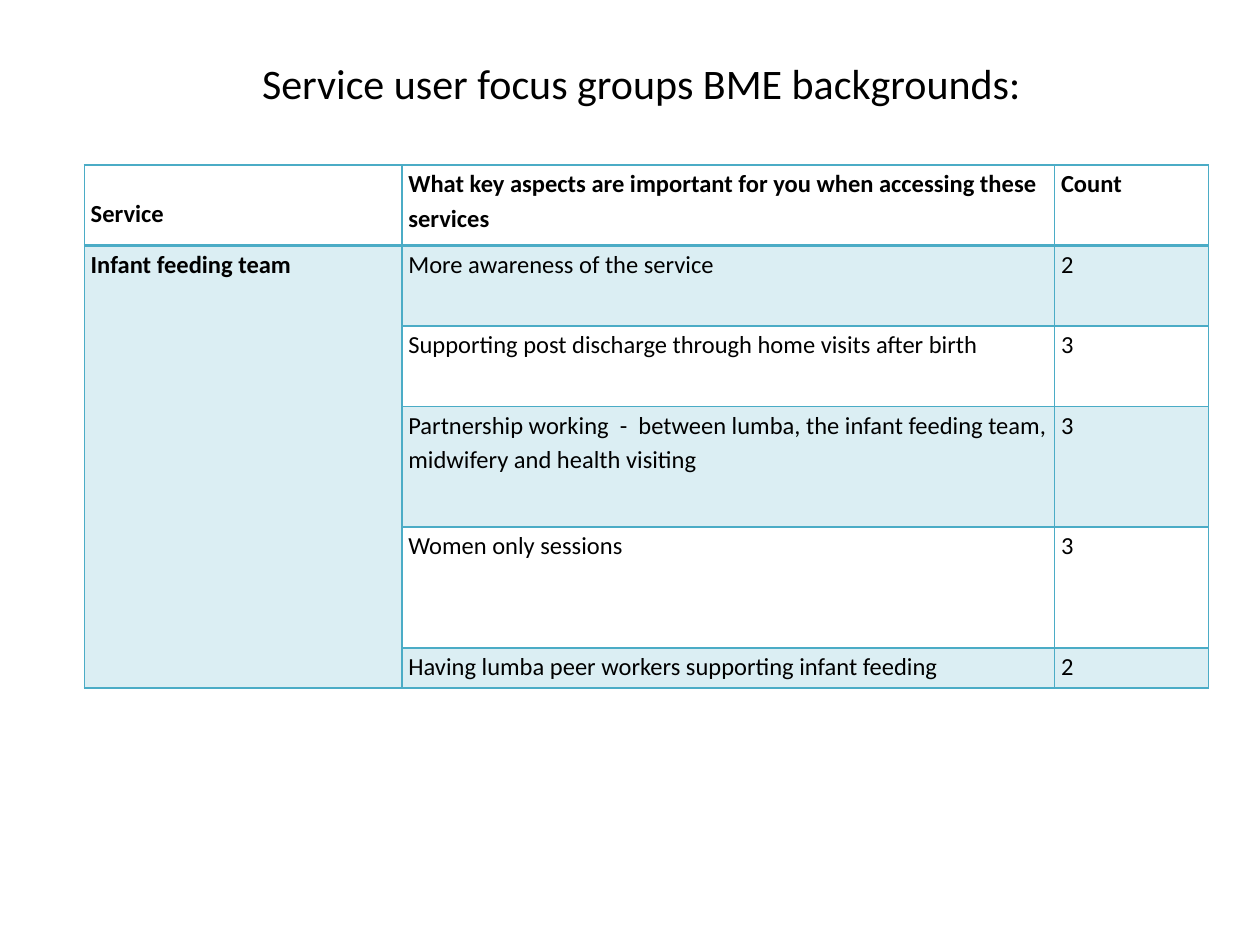
from typing import NamedTuple

from lxml.etree import SubElement
from pptx import Presentation
from pptx.dml.color import RGBColor
from pptx.enum.text import MSO_ANCHOR, PP_ALIGN
from pptx.oxml.ns import qn
from pptx.util import Pt

TEAL = "4BACC6"
BLACK = "000000"


class Row(NamedTuple):
    high: float
    texts: tuple[str, str, str]
    tint: bool = False
    bold: bool = False
    top: float = 1
    base: float = 1


ROWS = [
    Row(46, ("Service",
             "What key aspects are important for you when accessing these services",
             "Count"), bold=True, base=2),
    Row(46, ("Infant feeding team", "More awareness of the service", "2"),
        tint=True, top=2),
    Row(46, ("", "Supporting post discharge through home visits after birth", "3")),
    Row(69, ("", "Partnership working  -  between lumba, the infant feeding team, "
                 "midwifery and health visiting", "3"), tint=True),
    Row(69, ("", "Women only sessions", "3")),
    Row(23, ("", "Having lumba peer workers supporting infant feeding", "2"), tint=True),
]
WIDTHS = (181.5, 373, 88)


def color(code: str) -> RGBColor:
    return RGBColor.from_string(code)


def write(frame, text: str, size: float = 14, bold: bool = False,
          align=PP_ALIGN.LEFT, space: float = 1.15) -> None:
    frame.word_wrap = True
    para = frame.paragraphs[0]
    para.alignment = align
    para.line_spacing = space
    para.font.size = Pt(size)
    if not text:
        return
    run = para.add_run()
    run.text = text
    run.font.name = "Calibri"
    run.font.size = Pt(size)
    run.font.bold = bold
    run.font.color.rgb = color(BLACK)


def edge(props, side: str, width: float) -> None:
    line = SubElement(props, qn(f"a:{side}"), w=str(int(Pt(width))))
    fill = SubElement(line, qn("a:solidFill"))
    SubElement(fill, qn("a:srgbClr"), val=TEAL)


def paint(cell, row: Row) -> None:
    cell.margin_left = cell.margin_right = Pt(3.6)
    cell.margin_top = cell.margin_bottom = Pt(0)
    props = cell._tc.get_or_add_tcPr()
    for side, width in (("lnL", 1), ("lnR", 1), ("lnT", row.top), ("lnB", row.base)):
        edge(props, side, width)
    if row.tint:
        cell.fill.solid()
        cell.fill.fore_color.rgb = color(TEAL)
        tone = props.find(f"{qn('a:solidFill')}/{qn('a:srgbClr')}")
        SubElement(tone, qn("a:alpha"), val="20000")
    else:
        cell.fill.background()


def draw_grid(slide, rows: list[Row], left: float, top: float) -> None:
    high = sum(row.high for row in rows)
    grid = slide.shapes.add_table(len(rows), len(WIDTHS), Pt(left), Pt(top),
                                  Pt(sum(WIDTHS)), Pt(high)).table
    grid.first_row = grid.horz_banding = False
    for col, width in zip(grid.columns, WIDTHS):
        col.width = Pt(width)
    for y, row in enumerate(rows):
        grid.rows[y].height = Pt(row.high)
        for x, text in enumerate(row.texts):
            cell = grid.cell(y, x)
            paint(cell, row)
            write(cell.text_frame, text, bold=row.bold or x == 0)
    grid.cell(0, 0).margin_top = Pt(17)
    grid.cell(1, 0).merge(grid.cell(len(rows) - 1, 0))


def main() -> None:
    deck = Presentation()
    deck.slide_width, deck.slide_height = Pt(720), Pt(540)
    slide = deck.slides.add_slide(deck.slide_layouts[6])
    draw_grid(slide, ROWS, 48.25, 94.3)
    title = slide.shapes.add_textbox(Pt(42.5), Pt(2.5), Pt(648), Pt(90)).text_frame
    title.vertical_anchor = MSO_ANCHOR.MIDDLE
    write(title, "Service user focus groups BME backgrounds:", size=24,
          align=PP_ALIGN.CENTER, space=1.0)
    deck.save("out.pptx")


if __name__ == "__main__":
    main()
